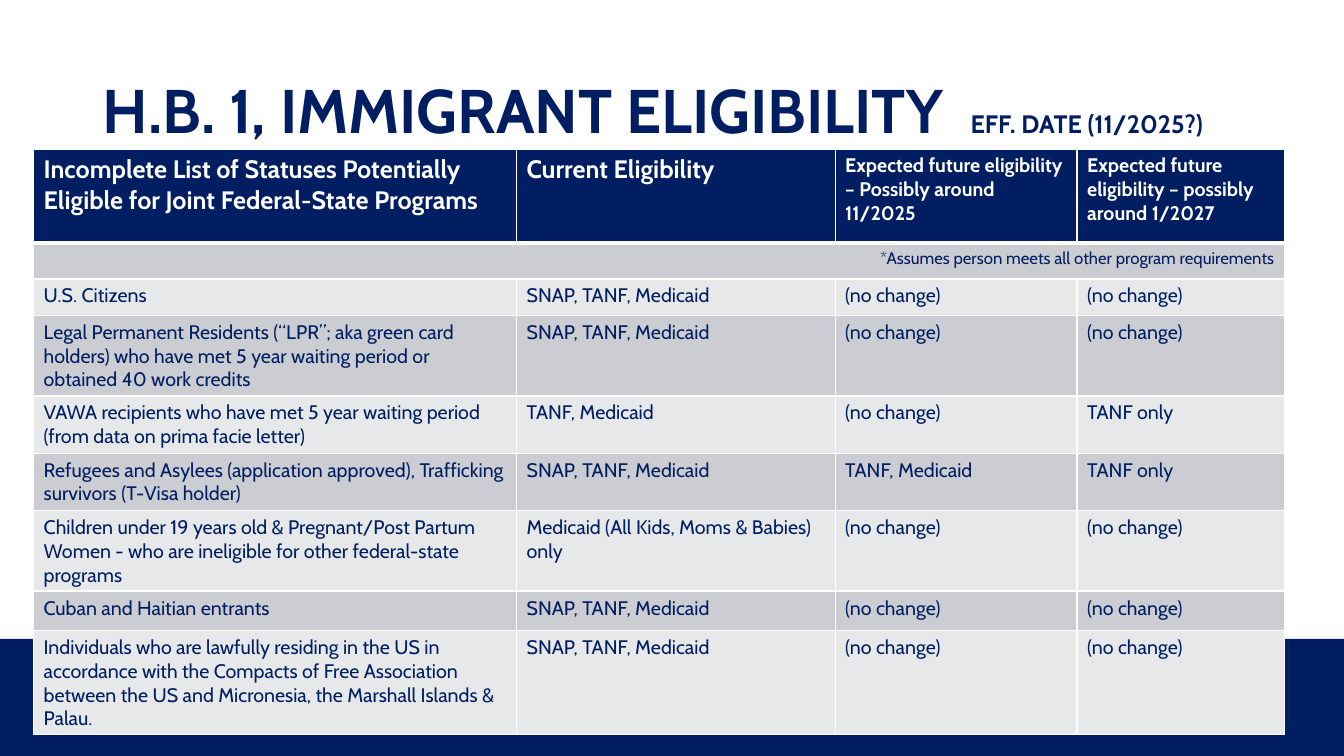
from lxml.etree import SubElement
from pptx import Presentation
from pptx.dml.color import RGBColor
from pptx.enum.shapes import MSO_SHAPE
from pptx.enum.text import MSO_ANCHOR, PP_ALIGN
from pptx.oxml.ns import qn
from pptx.util import Emu, Inches, Pt

SLIDE_WIDTH, SLIDE_HEIGHT = Inches(13.33), Inches(7.5)
NAVY, WHITE = "001E61", "FFFFFF"
BANDS = ["CCCDD2", "E7E8EA"]

COLUMN_WIDTHS = [4.79, 3.16, 2.4, 2.06]
ROW_HEIGHTS = [0.93, 0.36, 0.36, 0.53, 0.45, 0.52, 0.53, 0.39, 0.94]

ALL_PROGRAMS = "SNAP, TANF, Medicaid"
SAME = "(no change)"
HEADINGS = [
    ("Incomplete List of Statuses Potentially Eligible for Joint Federal-State Programs", 18),
    ("Current Eligibility", 18),
    ("Expected future eligibility – Possibly around 11/2025", 14),
    ("Expected future eligibility – possibly around 1/2027", 14),
]
ASSUMPTION = "*Assumes person meets all other program requirements"
STATUSES = [
    ("U.S. Citizens", ALL_PROGRAMS, SAME, SAME),
    ("Legal Permanent Residents (“LPR”; aka green card holders) who have met 5 year "
     "waiting period or obtained 40 work credits", ALL_PROGRAMS, SAME, SAME),
    ("VAWA recipients who have met 5 year waiting period (from data on prima facie letter)",
     "TANF, Medicaid", SAME, "TANF only"),
    ("Refugees and Asylees (application approved), Trafficking survivors (T-Visa holder)",
     ALL_PROGRAMS, "TANF, Medicaid", "TANF only"),
    ("Children under 19 years old & Pregnant/Post Partum Women - who are ineligible for "
     "other federal-state programs", "Medicaid (All Kids, Moms & Babies) only", SAME, SAME),
    ("Cuban and Haitian entrants", ALL_PROGRAMS, SAME, SAME),
    ("Individuals who are lawfully residing in the US in accordance with the Compacts of Free "
     "Association between the US and Micronesia, the Marshall Islands & Palau.",
     ALL_PROGRAMS, SAME, SAME),
]


def color(hex_string):
    return RGBColor.from_string(hex_string)


def share(left, top, width, height):
    """Turn shares of the slide's size into a position and a size."""
    sizes = (SLIDE_WIDTH, SLIDE_HEIGHT) * 2
    return [Emu(int(part * size)) for part, size in zip((left, top, width, height), sizes)]


def add_run(paragraph, text, size, bold=False, hex_string=NAVY):
    run = paragraph.add_run()
    run.text = text
    formats = {"name": "Cabin", "size": Pt(size), "bold": bold}
    for name, value in formats.items():
        setattr(run.font, name, value)
    run.font.color.rgb = color(hex_string)


def add_footer_band(slide):
    band = slide.shapes.add_shape(MSO_SHAPE.RECTANGLE, *share(0, 0.845, 1, 0.155))
    band.shadow.inherit = False
    band.fill.solid()
    band.fill.fore_color.rgb = color(NAVY)
    band.line.fill.background()


def add_title(slide):
    frame = slide.shapes.add_textbox(*share(0.069, 0.053, 0.863, 0.193)).text_frame
    frame.word_wrap = True
    frame.vertical_anchor = MSO_ANCHOR.MIDDLE
    paragraph = frame.paragraphs[0]
    paragraph.line_spacing = 0.9
    tabs = SubElement(paragraph._p.get_or_add_pPr(), qn("a:tabLst"))
    SubElement(tabs, qn("a:tab"), pos=str(Inches(8.61)), algn="l")
    add_run(paragraph, "H.B. 1, IMMIGRANT ELIGIBILITY\t", 44, bold=True)
    add_run(paragraph, "EFF. DATE (11/2025?)", 18, bold=True)


def style_cell(cell, fill, bottom_width=1):
    """Give the cell white borders and a plain fill."""
    properties = cell._tc.get_or_add_tcPr()
    for side, width in {"L": 1, "R": 1, "T": 1, "B": bottom_width}.items():
        line = SubElement(properties, qn(f"a:ln{side}"), w=str(Pt(width)))
        SubElement(SubElement(line, qn("a:solidFill")), qn("a:srgbClr"), val=WHITE)
    cell.fill.solid()
    cell.fill.fore_color.rgb = color(fill)


def add_eligibility_table(slide):
    frame = slide.shapes.add_table(len(ROW_HEIGHTS), len(COLUMN_WIDTHS),
                                   *share(0.025, 0.197, 0.932, 0.773))
    table = frame.table
    for column, width in zip(table.columns, COLUMN_WIDTHS):
        column.width = Inches(width)
    for row, height in zip(table.rows, ROW_HEIGHTS):
        row.height = Inches(height)

    for cell, (text, size) in zip(table.rows[0].cells, HEADINGS):
        style_cell(cell, NAVY, bottom_width=3)
        add_run(cell.text_frame.paragraphs[0], text, size, bold=True, hex_string=WHITE)

    for index in range(1, len(ROW_HEIGHTS)):
        for cell in table.rows[index].cells:
            style_cell(cell, BANDS[(index - 1) % 2])

    note = table.cell(1, 0)
    note.merge(table.cell(1, len(COLUMN_WIDTHS) - 1))
    paragraph = note.text_frame.paragraphs[0]
    paragraph.alignment = PP_ALIGN.RIGHT
    add_run(paragraph, ASSUMPTION, 12)

    for index, status in enumerate(STATUSES, start=2):
        for cell, text in zip(table.rows[index].cells, status):
            add_run(cell.text_frame.paragraphs[0], text, 14)


def main():
    presentation = Presentation()
    presentation.slide_width, presentation.slide_height = SLIDE_WIDTH, SLIDE_HEIGHT
    slide = presentation.slides.add_slide(presentation.slide_layouts[6])
    add_footer_band(slide)
    add_title(slide)
    add_eligibility_table(slide)
    presentation.save("out.pptx")


if __name__ == "__main__":
    main()
